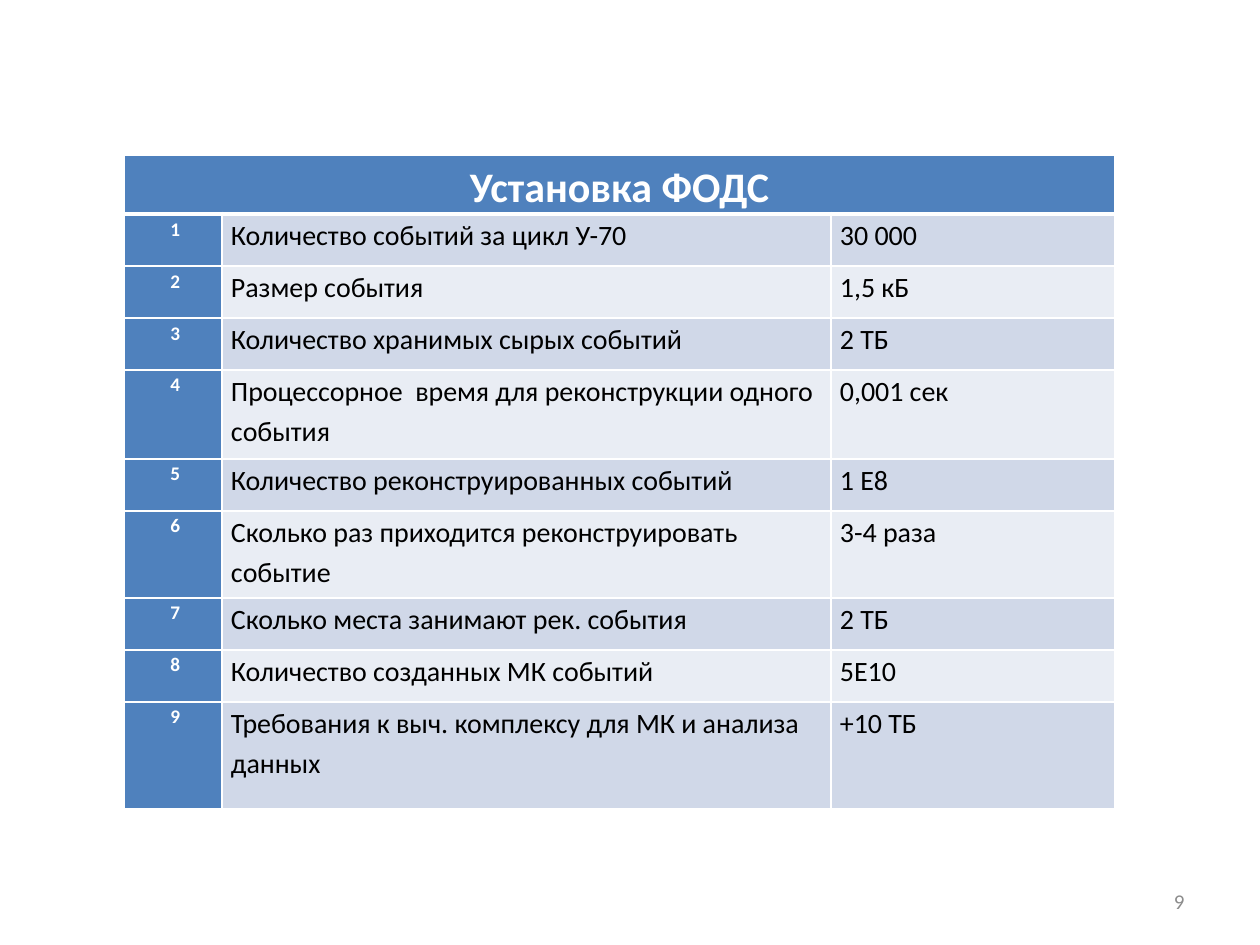
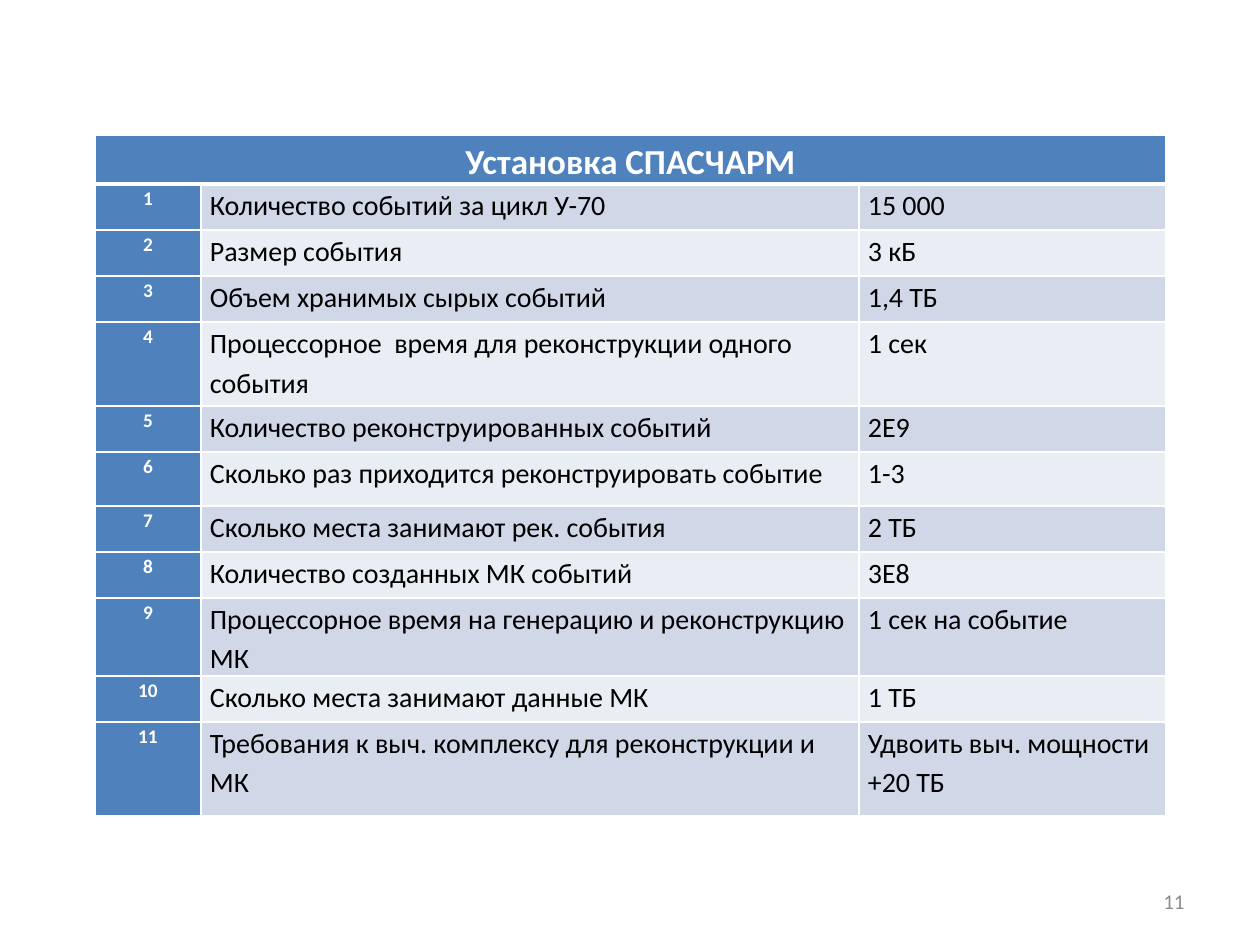
"""Build two slides, each with a table of computing needs for one installation."""
from dataclasses import dataclass

import lxml.etree
import pptx
import pptx.dml.color
import pptx.enum.text
import pptx.oxml.ns
import pptx.util

FONT = "Calibri"
WHITE, BLACK, GREY = "FFFFFF", "000000", "8C8C8C"
BLUE, BANDS = "4F81BD", ("E9EDF4", "D0D8E8")
ALIGN = pptx.enum.text.PP_ALIGN
ANCHOR = pptx.enum.text.MSO_ANCHOR


@dataclass
class Row:
    label: str
    value: str
    height: int


@dataclass
class TableSlide:
    title: str
    title_size: int
    title_height: int
    number: int
    left: int
    top: int
    cols: tuple[int, ...]
    rows: list[Row]
    prefix: str = ""


SLIDES = [
    TableSlide("Установка ФОДС", 24, 59, 9, 124, 155, (98, 609, 284), [
        Row("Количество событий за цикл У-70", "30 000", 52),
        Row("Размер события", "1,5 кБ", 52),
        Row("Количество хранимых сырых событий", "2 ТБ", 52),
        Row("Процессорное  время для реконструкции одного события", "0,001 сек", 89),
        Row("Количество реконструированных событий", "1 Е8", 52),
        Row("Сколько раз приходится реконструировать событие", "3-4 раза", 87),
        Row("Сколько места занимают рек. события", "2 ТБ", 52),
        Row("Количество созданных МК событий", "5E10", 52),
        Row("Требования к выч. комплексу для МК и анализа данных", "+10 ТБ", 107),
    ], prefix=" "),
    TableSlide("Установка СПАСЧАРМ", 20, 49, 11, 95, 135, (106, 658, 307), [
        Row("Количество событий за цикл У-70", "15 000", 46),
        Row("Размер события", "3 кБ", 46),
        Row("Объем хранимых сырых событий", "1,4 ТБ", 46),
        Row("Процессорное  время для реконструкции одного события", "1 сек", 84),
        Row("Количество реконструированных событий", "2E9", 46),
        Row("Сколько раз приходится реконструировать событие", "1-3", 54),
        Row("Сколько места занимают рек. события", "2 ТБ", 46),
        Row("Количество созданных МК событий", "3E8", 46),
        Row("Процессорное время на генерацию и реконструкцию МК", "1 сек на событие", 78),
        Row("Сколько места занимают данные МК", "1 ТБ", 46),
        Row("Требования к выч. комплексу для реконструкции и МК",
            "Удвоить выч. мощности +20 ТБ", 94),
    ]),
]


def px(n: int) -> int:
    return pptx.util.Emu(round(n * 914400 / 126))


def rgb(color: str) -> pptx.dml.color.RGBColor:
    return pptx.dml.color.RGBColor.from_string(color)


def write(tf, text: str, *, size: int, color: str, bold: bool = False,
          align=ALIGN.LEFT, spacing: float = 1.0) -> None:
    p = tf.paragraphs[0]
    p.alignment = align
    p.line_spacing = spacing
    r = p.add_run()
    r.text = text
    r.font.name = FONT
    r.font.size = pptx.util.Pt(size)
    r.font.bold = bold
    r.font.color.rgb = rgb(color)


def style_cell(cell, fill: str, top: int = 1, bottom: int = 1) -> None:
    cell.margin_left = cell.margin_right = px(9)
    cell.margin_top = cell.margin_bottom = 0
    cell.fill.solid()
    cell.fill.fore_color.rgb = rgb(fill)
    tag = pptx.oxml.ns.qn
    widths = {"a:lnL": 1, "a:lnR": 1, "a:lnT": top, "a:lnB": bottom}
    for i, (side, width) in enumerate(widths.items()):
        ln = lxml.etree.Element(tag(side), w=str(pptx.util.Pt(width)))
        solid = lxml.etree.SubElement(ln, tag("a:solidFill"))
        lxml.etree.SubElement(solid, tag("a:srgbClr"), val=WHITE)
        cell._tc.get_or_add_tcPr().insert(i, ln)


def add_needs_table(s, data: TableSlide) -> None:
    heights = [data.title_height] + [row.height for row in data.rows]
    table = s.shapes.add_table(
        len(heights), len(data.cols), px(data.left), px(data.top),
        px(sum(data.cols)), px(sum(heights))).table
    table.horz_banding = False
    for col, width in zip(table.columns, data.cols):
        col.width = px(width)
    for row, height in zip(table.rows, heights):
        row.height = px(height)

    for cell in table.rows[0].cells:
        style_cell(cell, BLUE, bottom=3)
    table.cell(0, 0).merge(table.cell(0, len(data.cols) - 1))
    write(table.cell(0, 0).text_frame, data.title, size=data.title_size,
          color=WHITE, bold=True, align=ALIGN.CENTER, spacing=1.15)

    for n, row in enumerate(data.rows, 1):
        number, *body = table.rows[n].cells
        top = 3 if n == 1 else 1
        style_cell(number, BLUE, top)
        write(number.text_frame, f"{data.prefix}{n}", size=11, color=WHITE,
              bold=True, align=ALIGN.CENTER, spacing=1.15)
        for cell, text in zip(body, (row.label, row.value)):
            style_cell(cell, BANDS[n % 2], top)
            write(cell.text_frame, text, size=16, color=BLACK, spacing=1.15)


def add_slide_number(s, number: int) -> None:
    tf = s.shapes.add_textbox(px(903), px(876), px(294), px(50)).text_frame
    tf.word_wrap = True
    tf.vertical_anchor = ANCHOR.MIDDLE
    write(tf, str(number), size=12, color=GREY, align=ALIGN.RIGHT)


def main() -> None:
    prs = pptx.Presentation()
    prs.slide_width, prs.slide_height = px(1260), px(945)
    for data in SLIDES:
        s = prs.slides.add_slide(prs.slide_layouts[6])
        add_slide_number(s, data.number)
        add_needs_table(s, data)
    prs.save("out.pptx")


if __name__ == "__main__":
    main()
